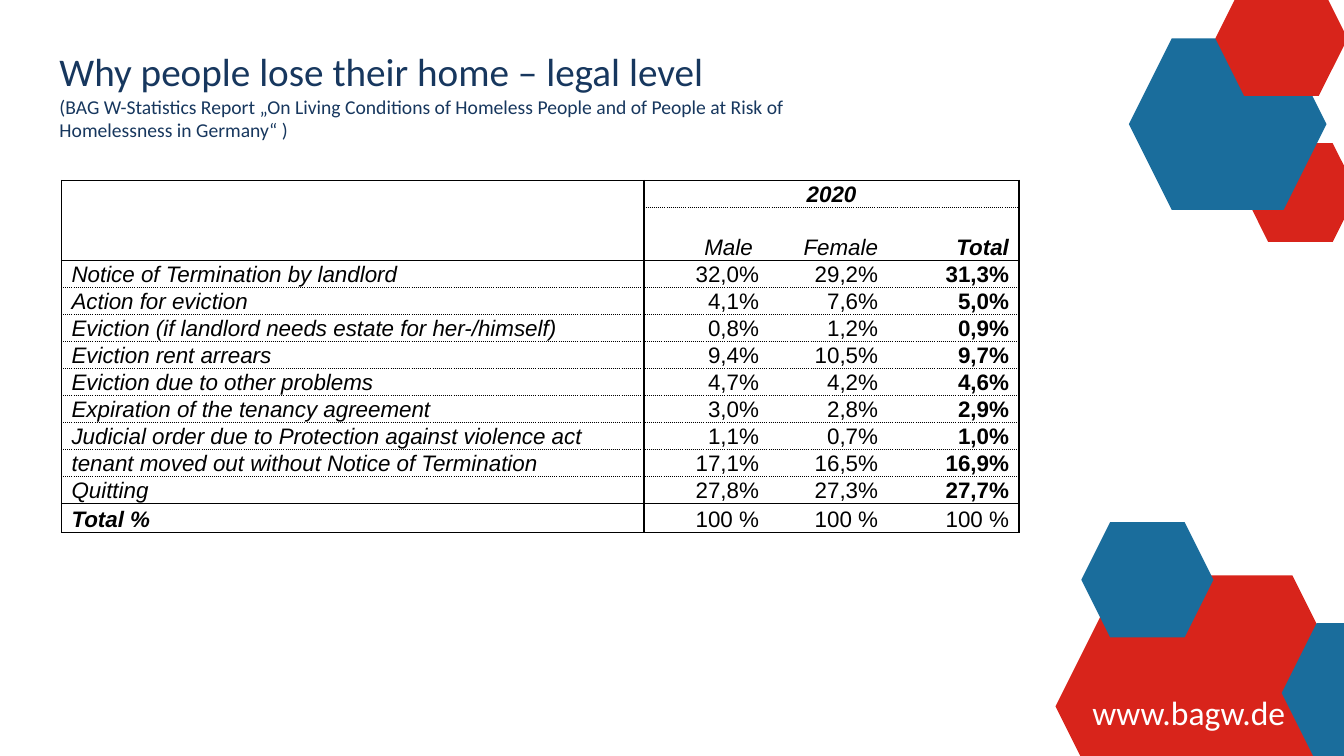
from dataclasses import dataclass

from lxml.etree import SubElement
from pptx import Presentation
from pptx.dml.color import RGBColor
from pptx.enum.shapes import MSO_SHAPE
from pptx.enum.text import MSO_ANCHOR as Anchor, PP_ALIGN as Align
from pptx.oxml.ns import qn
from pptx.util import Cm, Pt


@dataclass(frozen=True)
class Theme:
    red: str = "D8241B"
    blue: str = "1A6D9C"
    navy: str = "17375E"
    black: str = "000000"
    white: str = "FFFFFF"
    heading_font: str = "Calibri"
    table_font: str = "Arial"
    title_size: int = 28
    source_size: int = 14
    web_size: int = 24
    table_size: int = 16


theme = Theme()


def style_run(run, font, size, color, bold=False, italic=False):
    run.font.name = font
    run.font.size = Pt(size)
    run.font.color.rgb = RGBColor.from_string(color)
    run.font.bold = bold
    run.font.italic = italic


def set_border(cell, side, kind):
    """Draw one cell edge; side is L, R, T or B and kind is solid, dot or none."""
    width = Pt(0.5 if kind == "dot" else 1)
    line = SubElement(cell._tc.get_or_add_tcPr(), qn(f"a:ln{side}"), w=str(width))
    if kind == "none":
        SubElement(line, qn("a:noFill"))
        return
    fill = SubElement(line, qn("a:solidFill"))
    SubElement(fill, qn("a:srgbClr"), val=theme.black)
    SubElement(line, qn("a:prstDash"), val=kind)


presentation = Presentation()
presentation.slide_width = Cm(33.87)
presentation.slide_height = Cm(19.05)
slide = presentation.slides.add_slide(presentation.slide_layouts[6])

# Hexagons, back to front: left, top, width, height
hexagons = [
    (31.34, 3.61, 2.87, 2.49, theme.red),
    (26.6, 14.5, 7.62, 6.6, theme.red),
    (27.25, 13.16, 3.33, 2.9, theme.blue),
    (32.3, 15.7, 4.06, 3.53, theme.blue),
    (28.45, 0.97, 4.98, 4.32, theme.blue),
    (30.63, -0.48, 3.33, 2.9, theme.red),
]
for left, top, width, height, color in hexagons:
    hexagon = slide.shapes.add_shape(
        MSO_SHAPE.HEXAGON, Cm(left), Cm(top), Cm(width), Cm(height))
    hexagon.shadow.inherit = False
    hexagon.fill.solid()
    hexagon.fill.fore_color.rgb = RGBColor.from_string(color)
    hexagon.line.fill.background()

web_box = slide.shapes.add_textbox(Cm(27.28), Cm(17.32), Cm(7.24), Cm(1.27))
web_box.text_frame.word_wrap = True
web_box.text_frame.text = "www.bagw.de"
style_run(web_box.text_frame.paragraphs[0].runs[0],
          theme.heading_font, theme.web_size, theme.white)

# Reasons table
rows = [
    ("", "2020", "", ""),
    ("", "Male ", "Female", "Total"),
    ("Notice of Termination by landlord", "32,0%", "29,2%", "31,3%"),
    ("Action for eviction", "4,1%", "7,6%", "5,0%"),
    ("Eviction (if landlord needs estate for her-/himself)", "0,8%", "1,2%", "0,9%"),
    ("Eviction rent arrears", "9,4%", "10,5%", "9,7%"),
    ("Eviction due to other problems", "4,7%", "4,2%", "4,6%"),
    ("Expiration of the tenancy agreement", "3,0%", "2,8%", "2,9%"),
    ("Judicial order due to Protection against violence act", "1,1%", "0,7%", "1,0%"),
    ("tenant moved out without Notice of Termination", "17,1%", "16,5%", "16,9%"),
    ("Quitting", "27,8%", "27,3%", "27,7%"),
    ("Total %", "100 %", "100 %", "100 %"),
]
column_widths = [14.68, 3.15, 3, 3.3]
total_row = len(rows) - 1
total_column = len(column_widths) - 1
row_heights = [0.68, 1.33] + [0.68] * (total_row - 2) + [0.74]
solid_below = {1, total_row - 1, total_row}

table = slide.shapes.add_table(
    len(rows), len(column_widths), Cm(1.55), Cm(4.55),
    Cm(sum(column_widths)), Cm(sum(row_heights))).table
table.first_row = False
table.horz_banding = False
for column, width in zip(table.columns, column_widths):
    column.width = Cm(width)
for row, height in zip(table.rows, row_heights):
    row.height = Cm(height)

for r, texts in enumerate(rows):
    for c, text in enumerate(texts):
        cell = table.cell(r, c)
        cell.margin_top = cell.margin_bottom = 0
        cell.vertical_anchor = Anchor.BOTTOM
        in_header_corner = c == 0 and r < 2
        set_border(cell, "L", "solid" if c < 2 else "none")
        set_border(cell, "R", "solid" if c in (0, total_column) or r == 0 else "none")
        set_border(cell, "T", "solid" if r == 0 or r - 1 in solid_below else "dot")
        set_border(cell, "B", "solid" if r in solid_below or in_header_corner else "dot")
        cell.fill.solid()
        cell.fill.fore_color.rgb = RGBColor.from_string(theme.white)
        if not text:
            continue
        cell.text_frame.text = text
        paragraph = cell.text_frame.paragraphs[0]
        if r == 0:
            paragraph.alignment = Align.CENTER
        elif c > 0:
            paragraph.alignment = Align.RIGHT
        is_total = c == (0 if r == total_row else total_column)
        style_run(paragraph.runs[0], theme.table_font, theme.table_size, theme.black,
                  bold=r == 0 or is_total, italic=r < 2 or c == 0)

table.cell(0, 0).merge(table.cell(1, 0))
table.cell(0, 1).merge(table.cell(0, total_column))

# Title with its source
title_box = slide.shapes.add_textbox(Cm(1.25), Cm(1.07), Cm(19.23), Cm(1.55))
title_box.text_frame.word_wrap = True
title_box.text_frame.text = (
    "Why people lose their home – legal level\v"
    "(BAG W-Statistics Report „On Living Conditions of Homeless People "
    "and of People at Risk of Homelessness in Germany“ )")
title_run, source_run = title_box.text_frame.paragraphs[0].runs
style_run(title_run, theme.heading_font, theme.title_size, theme.navy)
style_run(source_run, theme.heading_font, theme.source_size, theme.navy)

presentation.save("out.pptx")
